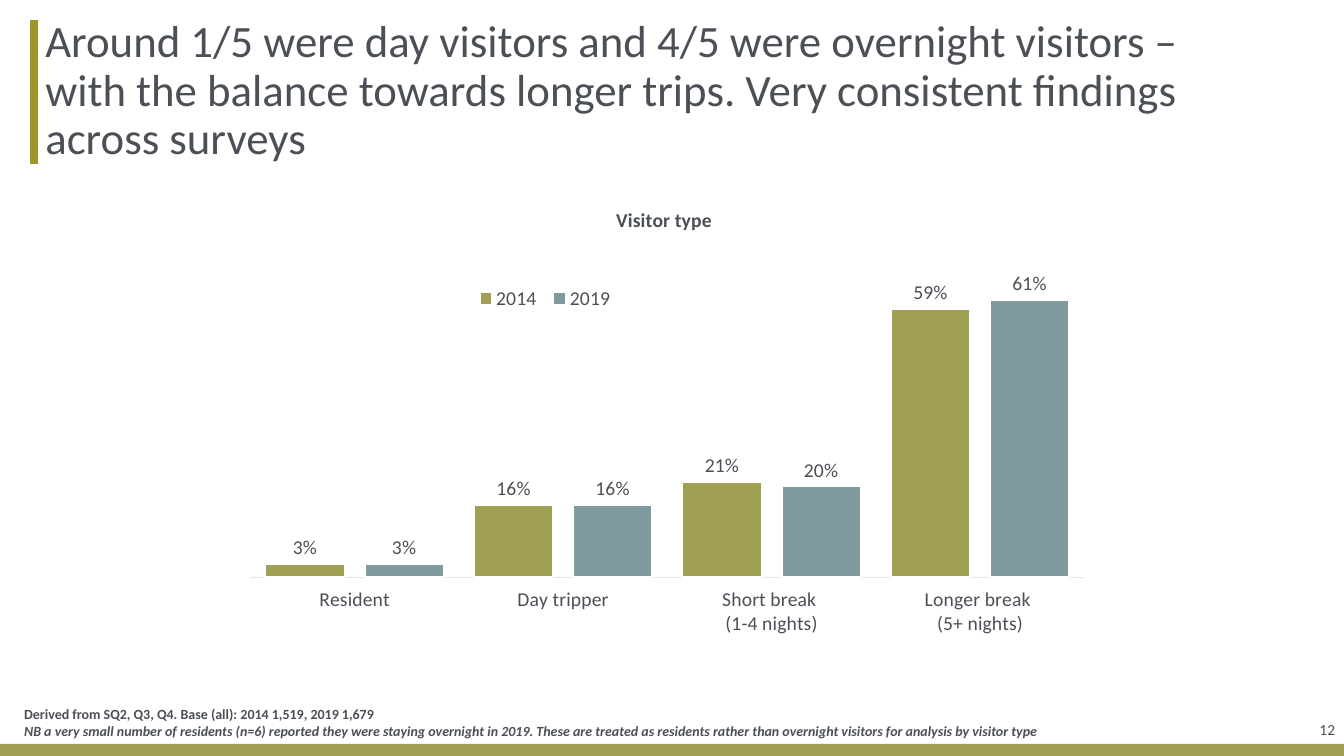
from pptx import Presentation
from pptx.chart.data import CategoryChartData as Data
from pptx.dml.color import RGBColor
from pptx.enum.chart import XL_CHART_TYPE as Kind
from pptx.enum.chart import XL_LABEL_POSITION as Spot
from pptx.enum.chart import XL_LEGEND_POSITION as Side
from pptx.enum.chart import XL_TICK_LABEL_POSITION as Place
from pptx.enum.chart import XL_TICK_MARK as Tick
from pptx.enum.shapes import MSO_CONNECTOR as Link
from pptx.enum.shapes import MSO_SHAPE as Form
from pptx.enum.text import MSO_ANCHOR as Anchor
from pptx.enum.text import PP_ALIGN as Align
from pptx.oxml import parse_xml
from pptx.oxml.ns import nsdecls, qn
from pptx.util import Pt

SCALE = 9144  # 100 px to the inch
INK, OLIVE, TEAL = "4B4F56", "9FA052", "7F9B9F"
MARK, PALE, WHITE = "9F962B", "E3E4E7", "FFFFFF"


def px(n):
    return n * SCALE


def hue(code):
    return RGBColor.from_string(code)


def layout(node, prior, x, y, w=None, h=None, inner=False):
    """Place a chart part by fractions of the chart, after its prior tag."""
    old = node.find(qn("c:layout"))
    if old is not None:
        node.remove(old)
    rows = '<c:layoutTarget val="inner"/>' if inner else ""
    rows += '<c:xMode val="edge"/><c:yMode val="edge"/>'
    for key, val in zip("xywh", (x, y, w, h)):
        if val is not None:
            rows += f'<c:{key} val="{val}"/>'
    part = parse_xml(f'<c:layout {nsdecls("c")}><c:manualLayout>{rows}'
                     '</c:manualLayout></c:layout>')
    if prior:
        node.find(qn(prior)).addnext(part)
    else:
        node.insert(0, part)


class Deck:
    def __init__(self, wide, high, face="Calibri"):
        self.prs = Presentation()
        self.prs.slide_width, self.prs.slide_height = px(wide), px(high)
        self.slide = self.prs.slides.add_slide(self.prs.slide_layouts[6])
        self.items = self.slide.shapes
        self.face = face

    def style(self, font, size, bold=False, slant=False):
        font.name, font.size = self.face, Pt(size)
        font.bold, font.italic = bold, slant
        font.color.rgb = hue(INK)

    def bar(self, x, y, w, h, fill):
        box = self.items.add_shape(Form.RECTANGLE, px(x), px(y), px(w), px(h))
        box.shadow.inherit = False
        box.fill.solid()
        box.fill.fore_color.rgb = hue(fill)
        box.line.fill.background()

    def rule(self, x1, y1, x2, y2, tint, width):
        line = self.items.add_connector(Link.STRAIGHT, px(x1), px(y1), px(x2), px(y2))
        line.line.color.rgb = hue(tint)
        line.line.width = Pt(width)
        line.element.spPr.append(parse_xml(f'<a:effectLst {nsdecls("a")}/>'))

    def text(self, x, y, w, h, rows, size, inset=(8, 0, 0, 0),
             align=Align.LEFT, lead=1.0):
        """Each row is (words, bold, italic)."""
        frame = self.items.add_textbox(px(x), px(y), px(w), px(h)).text_frame
        frame.word_wrap = True
        frame.vertical_anchor = Anchor.MIDDLE
        (frame.margin_left, frame.margin_top,
         frame.margin_right, frame.margin_bottom) = map(px, inset)
        for n, (words, bold, slant) in enumerate(rows):
            para = frame.add_paragraph() if n else frame.paragraphs[0]
            para.alignment, para.line_spacing = align, lead
            run = para.add_run()
            run.text = words
            self.style(run.font, size, bold, slant)

    def chart(self, x, y, w, h, title, cats, sets):
        """Each set is (name, values, colour)."""
        data = Data(number_format="0%")
        data.categories = cats
        for name, vals, _ in sets:
            data.add_series(name, vals)
        chart = self.items.add_chart(Kind.COLUMN_CLUSTERED, px(x), px(y),
                                     px(w), px(h), data).chart
        self.style(chart.font, 14)

        # Title and legend
        chart.has_title = True
        run = chart.chart_title.text_frame.paragraphs[0].add_run()
        run.text = title
        self.style(run.font, 14, bold=True)
        chart.has_legend = True
        chart.legend.position = Side.TOP
        chart.legend.include_in_layout = False
        self.style(chart.legend.font, 14)

        # Axes
        vals = chart.value_axis
        vals.minimum_scale, vals.maximum_scale = 0, 0.7
        vals.has_major_gridlines = False
        vals.visible = False
        base = chart.category_axis
        base.major_tick_mark = base.minor_tick_mark = Tick.NONE
        base.tick_label_position = Place.LOW
        base.format.line.color.rgb = hue(PALE)
        base.format.line.width = Pt(0.75)
        self.style(base.tick_labels.font, 14)

        # Columns and their labels
        plot = chart.plots[0]
        plot.gap_width, plot.overlap = 38, -25
        plot.vary_by_categories = False
        for item, (_, _, tint) in zip(plot.series, sets):
            item.invert_if_negative = False
            item.format.fill.solid()
            item.format.fill.fore_color.rgb = hue(tint)
            item.format.line.color.rgb = hue(WHITE)
            item.format.line.width = Pt(1.5)
            tags = item.data_labels
            tags.show_value = True
            tags.number_format, tags.number_format_is_linked = "0%", False
            tags.position = Spot.OUTSIDE_END
            self.style(tags.font, 14)

        # Places inside the chart
        root = chart.element.find(qn("c:chart"))
        layout(root.find(qn("c:title")), "c:tx", 0.44, 0.04)
        layout(root.find(qn("c:legend")), "c:legendPos", 0.27, 0.2, 0.18, 0.07)
        layout(root.find(qn("c:plotArea")), None, 0.01, 0.155, 0.99, 0.643, True)


def main():
    deck = Deck(1333, 750)

    # Footer band and title mark
    deck.bar(0, 738, 1333, 12, OLIVE)
    deck.rule(34, 20, 34, 163, MARK, 6)

    # Page number, title and notes on the base
    deck.text(1242, 695, 92, 58, [("12", False, False)], 11,
              inset=(10, 5, 10, 5), align=Align.RIGHT)
    deck.text(37, 20, 1154, 142, [
        ("Around 1/5 were day visitors and 4/5 were overnight visitors – "
         "with the balance towards longer trips. Very consistent findings "
         "across surveys", False, False)], 32, lead=0.9)
    deck.text(16, 695, 1060, 43, [
        ("Derived from SQ2, Q3, Q4. Base (all): 2014 1,519, 2019 1,679",
         True, False),
        ("NB a very small number of residents (n=6) reported they were staying "
         "overnight in 2019. These are treated as residents rather than "
         "overnight visitors for analysis by visitor type", True, True)], 10)

    # Visitor types by year
    deck.chart(240, 181, 836, 491, "Visitor type",
               ["Resident", "Day tripper", "Short break \n(1-4 nights)",
                "Longer break \n(5+ nights)"],
               [("2014", (0.03, 0.16, 0.21, 0.59), OLIVE),
                ("2019", (0.03, 0.16, 0.2, 0.61), TEAL)])

    deck.prs.save("out.pptx")


if __name__ == "__main__":
    main()
